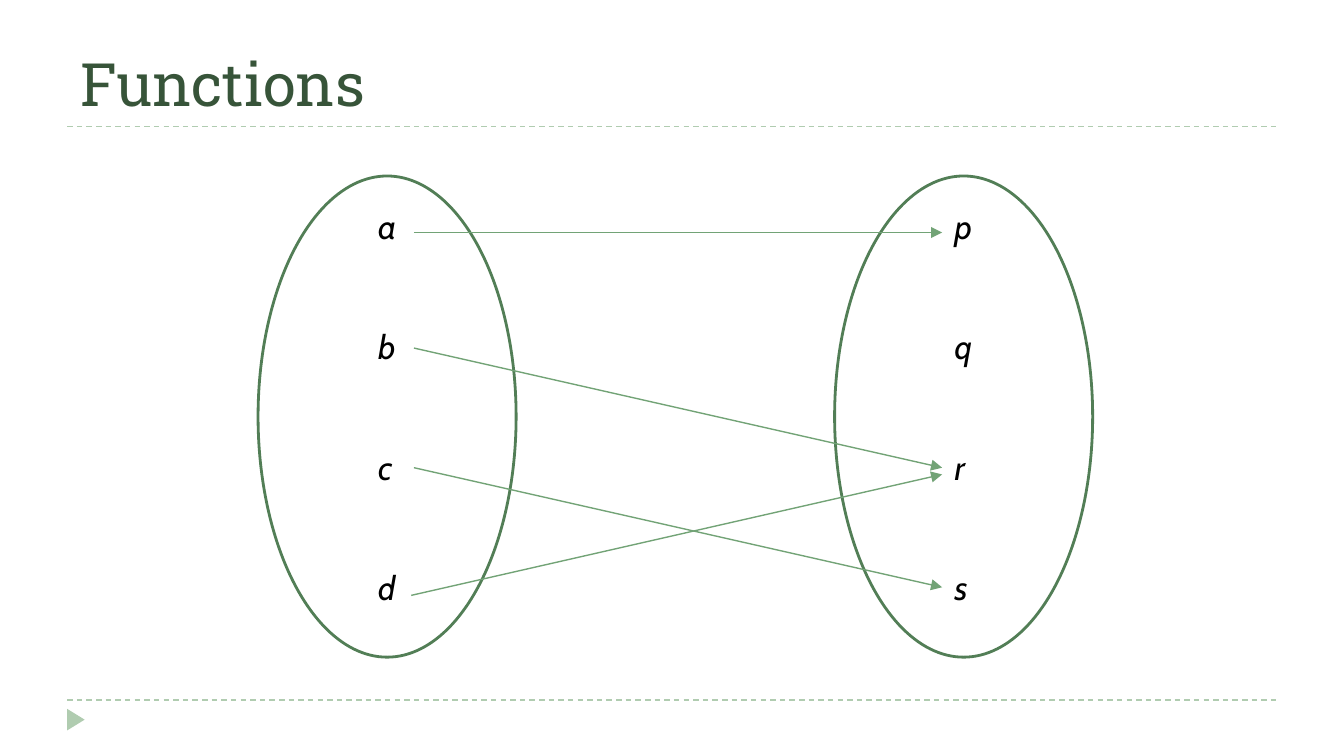
"""Build a slide that shows a function as arrows between two sets."""
from lxml import etree
from pptx import Presentation, util as u
from pptx.dml.color import RGBColor
from pptx.enum import dml, shapes, text
from pptx.oxml.ns import qn

COLUMNS, ROWS = 100, 56.25
CELL = u.Inches(0.1)
PALE, MEDIUM, DARK, TITLE = "B0CCB0", "72A376", "527E56", "375439"
TITLE_FORMAT = {"name": "Roboto Slab", "size": u.Pt(32)}
ELEMENT_FORMAT = {"name": "Cabin", "size": u.Pt(18), "italic": True}
ELEMENT_GAP = u.Pt(43)
SET_WIDTH = 19.2
DOMAIN, CODOMAIN = "abcd", "pqrs"
ARROWS = [
    ((11.6, 4.2), (50.9, 4.2)),
    ((11.6, 12.8), (50.9, 21.7)),
    ((11.6, 21.7), (50.9, 30.6)),
    ((11.4, 31.2), (50.9, 22.2)),
]


def grid(*cells):
    """Turn grid cells into slide lengths."""
    return [round(cell * CELL) for cell in cells]


def color(value):
    """Turn a hex string into a colour."""
    return RGBColor.from_string(value)


def apply(target, values):
    """Set each attribute from a dict of format values."""
    for name, value in values.items():
        setattr(target, name, value)


def add_line(slide, start, end, value, dashed=False, arrow=False):
    """Draw a thin line between two grid points."""
    connector = slide.shapes.add_connector(
        shapes.MSO_CONNECTOR.STRAIGHT, *grid(*start, *end))
    connector.line.color.rgb = color(value)
    connector.line.width = u.Pt(0.75)
    if dashed:
        connector.line.dash_style = dml.MSO_LINE.DASH
    if arrow:
        outline = connector.line._get_or_add_ln()
        etree.SubElement(outline, qn("a:tailEnd"), type="triangle")
    etree.SubElement(connector._element.spPr, qn("a:effectLst"))


def add_text(slide, box, lines, values, value, gap=0, frame_values=None):
    """Write one paragraph for each line in a text box."""
    frame = slide.shapes.add_textbox(*grid(*box)).text_frame
    apply(frame, frame_values or {})
    for index, line in enumerate(lines):
        paragraph = frame.paragraphs[0] if index == 0 else frame.add_paragraph()
        paragraph.space_before = gap if index else 0
        run = paragraph.add_run()
        run.text = line
        apply(run.font, values)
        run.font.color.rgb = color(value)


def add_header(slide, box, title):
    """Place the title above a dashed rule."""
    left, top, width, height = box
    add_text(slide, box, [title], TITLE_FORMAT, TITLE, frame_values={
        "word_wrap": True, "vertical_anchor": text.MSO_ANCHOR.BOTTOM})
    rule = top + height + 0.1
    add_line(slide, (left, rule), (left + width, rule), PALE, dashed=True)


def add_footer(slide, box):
    """Place a dashed rule above a small marker."""
    left, top, width, _ = box
    add_line(slide, (left, top), (left + width, top), PALE, dashed=True)
    marker = slide.shapes.add_shape(
        shapes.MSO_SHAPE.ISOSCELES_TRIANGLE,
        *grid(left - 0.15, top + 0.8, 1.6, 1.3))
    apply(marker, {"rotation": 90})
    marker.shadow.inherit = False
    marker.fill.solid()
    marker.fill.fore_color.rgb = color(PALE)
    marker.line.fill.background()


def add_set(slide, box, elements):
    """Draw an oval with its elements in a column."""
    left, top, width, height = box
    oval = slide.shapes.add_shape(shapes.MSO_SHAPE.OVAL, *grid(*box))
    oval.shadow.inherit = False
    oval.fill.solid()
    oval.fill.fore_color.rgb = color("FFFFFF")
    oval.line.color.rgb = color(DARK)
    oval.line.width = u.Pt(1.5)
    column = (left + width / 2 - 1.65, top + 1.7, 3.3, height - 4.5)
    add_text(slide, column, elements, ELEMENT_FORMAT, "000000", ELEMENT_GAP,
             {"word_wrap": False})


def add_mapping(slide, box):
    """Place the two sets at the sides of the box and join their elements."""
    left, top, width, height = box
    add_set(slide, (left, top, SET_WIDTH, height), DOMAIN)
    add_set(slide, (left + width - SET_WIDTH, top, SET_WIDTH, height), CODOMAIN)
    for ends in ARROWS:
        start, end = [(left + x, top + y) for x, y in ends]
        add_line(slide, start, end, MEDIUM, arrow=True)


def main():
    """Build and save the slide."""
    presentation = Presentation()
    presentation.slide_width, presentation.slide_height = grid(COLUMNS, ROWS)
    slide = presentation.slides.add_slide(presentation.slide_layouts[6])
    add_footer(slide, (5, 52.1, 90, 4.1))
    add_header(slide, (5, 1.2, 90, 8.1), "Functions")
    add_mapping(slide, (19.2, 13.1, 62.1, 35.8))
    presentation.save("out.pptx")


if __name__ == "__main__":
    main()
